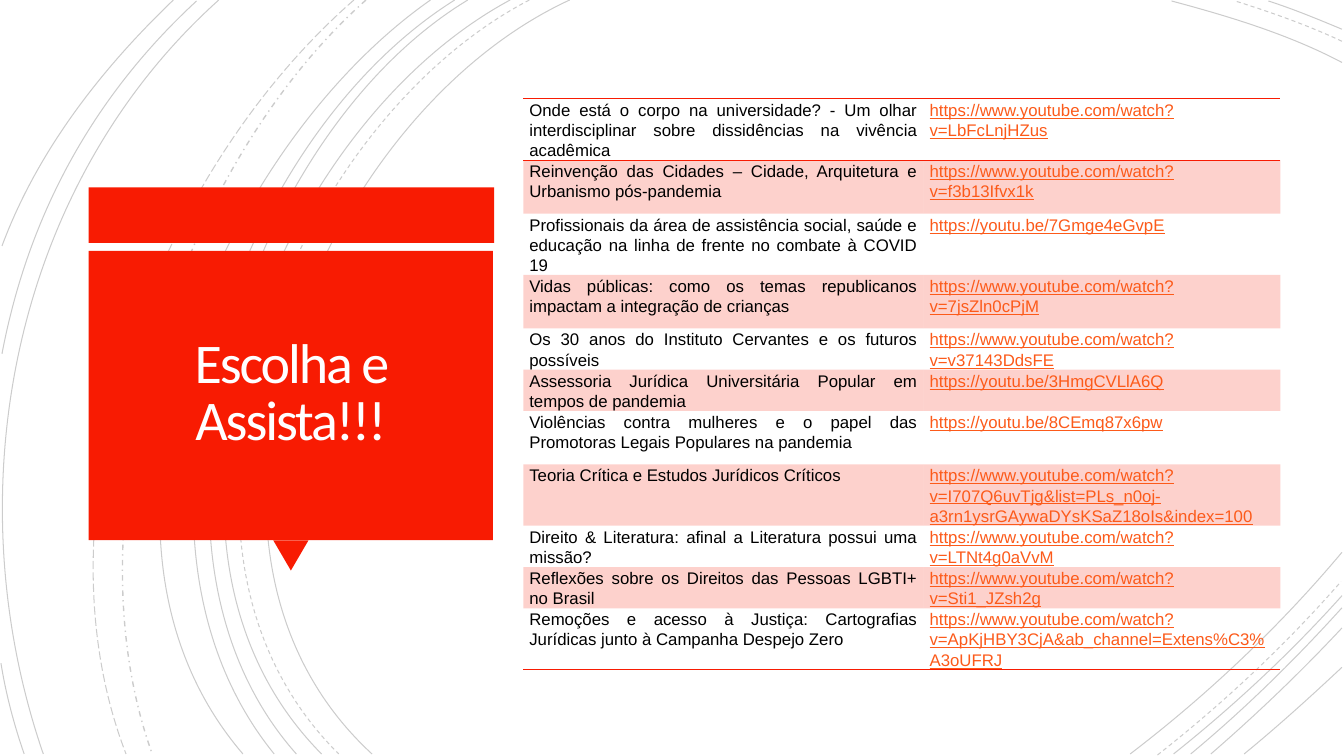
from lxml.etree import SubElement
from pptx import Presentation
from pptx.dml.color import RGBColor
from pptx.enum.dml import MSO_LINE
from pptx.enum.shapes import MSO_SHAPE
from pptx.enum.text import MSO_ANCHOR, MSO_AUTO_SIZE, PP_ALIGN
from pptx.oxml.ns import qn
from pptx.util import Inches, Pt

COLORS = {"accent": "F81B02", "link": "FC5A1A", "text": "000000", "title": "FFFEFF"}
NO_STYLE = "{2D5ABB26-0587-4C30-8999-92F81FD0307C}"

# Start point, two control points and end point of each background curve
SOLID_ARCS = [
    [(5.65, 0), (3.15, 1.15), (1.43, 5.4), (3.69, 7.48)],
    [(13.31, 0.62), (12.78, 0.34), (12.18, 0.16), (11.62, 0.01)],
    [(11.21, 7.48), (11.97, 6.9), (12.69, 6.22), (13.31, 5.48)],
    [(5.06, 0), (2.7, 1.27), (1.1, 5.37), (3.19, 7.48)],
    [(13.31, 0.29), (13.07, 0.19), (12.83, 0.09), (12.58, 0.01)],
    [(11.64, 7.48), (12.23, 7.01), (12.8, 6.48), (13.31, 5.91)],
    [(4.64, 0), (2.44, 1.33), (1.1, 5.41), (2.94, 7.48)],
    [(11.81, 7.48), (12.34, 7.04), (12.84, 6.55), (13.31, 6.03)],
    [(4.51, 0), (2.31, 1.38), (0.97, 5.33), (2.72, 7.48)],
    [(12.01, 7.48), (12.46, 7.09), (12.9, 6.67), (13.31, 6.23)],
    [(4.27, 0), (2.17, 1.47), (0.53, 5.29), (2.41, 7.48)],
    [(12.34, 7.48), (12.67, 7.21), (12.99, 6.92), (13.31, 6.62)],
    [(2.17, 0), (0.11, 1.85), (-0.46, 4.9), (0.43, 7.48)],
    [(1.95, 0.01), (0.92, 0.96), (0.28, 2.14), (0.02, 3.51)],
    [(0.01, 6.58), (0.06, 6.89), (0.14, 7.19), (0.24, 7.48)],
    [(1.72, 0), (1, 0.69), (0.37, 1.5), (0.02, 2.44)],
]
DASHED_ARCS = [
    [(5.25, 0), (2.85, 1.25), (1.23, 5.37), (3.36, 7.48)],
    [(13.31, 0.41), (12.97, 0.25), (12.6, 0.12), (12.25, 0.01)],
    [(11.48, 7.49), (12.13, 6.98), (12.75, 6.4), (13.3, 5.77)],
]
DASH_DOT_ARCS = [[(3.63, 0), (1.76, 1.66), (0.65, 5.09), (1.51, 7.48)]]
LONG_DASH_ARCS = [[(3.51, 0), (1.57, 1.69), (0.29, 4.99), (1.25, 7.48)]]
ARC_GROUPS = [
    (SOLID_ARCS, MSO_LINE.SOLID, 0.75),
    (DASHED_ARCS, MSO_LINE.DASH, 0.75),
    (DASH_DOT_ARCS, MSO_LINE.DASH_DOT, 1),
    (LONG_DASH_ARCS, MSO_LINE.LONG_DASH, 0.75),
]

TALL, LOW = 0.53, 0.37
WATCH = "https://www.youtube.com/watch?v="
SHORT = "https://youtu.be/"
VIDEOS = [
    (TALL, "Onde está o corpo na universidade? - Um olhar interdisciplinar sobre "
           "dissidências na vivência acadêmica", WATCH + "LbFcLnjHZus"),
    (TALL, "Reinvenção das Cidades – Cidade, Arquitetura e Urbanismo pós-pandemia",
     WATCH + "f3b13Ifvx1k"),
    (TALL, "Profissionais da área de assistência social, saúde e educação na linha "
           "de frente no combate à COVID 19", SHORT + "7Gmge4eGvpE"),
    (TALL, "Vidas públicas: como os temas republicanos impactam a integração de crianças",
     WATCH + "7jsZln0cPjM"),
    (LOW, "Os 30 anos do Instituto Cervantes e os futuros possíveis",
     WATCH + "v37143DdsFE"),
    (LOW, "Assessoria Jurídica Universitária Popular em tempos de pandemia",
     SHORT + "3HmgCVLlA6Q"),
    (TALL, "Violências contra mulheres e o papel das Promotoras Legais Populares "
           "na pandemia", SHORT + "8CEmq87x6pw"),
    (LOW, "Teoria Crítica e Estudos Jurídicos Críticos",
     WATCH + "I707Q6uvTjg&list=PLs_n0oj-a3rn1ysrGAywaDYsKSaZ18oIs&index=100"),
    (LOW, "Direito & Literatura: afinal a Literatura possui uma missão?",
     WATCH + "LTNt4g0aVvM"),
    (LOW, "Reflexões sobre os Direitos das Pessoas LGBTI+ no Brasil",
     WATCH + "Sti1_JZsh2g"),
    (TALL, "Remoções e acesso à Justiça: Cartografias Jurídicas junto à Campanha "
           "Despejo Zero", WATCH + "ApKjHBY3CjA&ab_channel=Extens%C3%A3oUFRJ"),
]


def rgb(name):
    return RGBColor.from_string(COLORS[name])


def apply(obj, formats):
    for name, value in formats.items():
        setattr(obj, name, value)


def set_alpha(element, percent):
    """Make every colour inside the element partly transparent."""
    for clr in element.iter(qn("a:srgbClr")):
        SubElement(clr, qn("a:alpha"), val=str(percent * 1000))


class SlideBuilder:
    cell_format = {"margin_left": Inches(0.06), "margin_right": Inches(0.06),
                   "margin_top": Inches(0.01), "margin_bottom": 0}
    cell_paragraph = {"line_spacing": 1.07, "space_after": Pt(8)}
    cell_font = {"name": "Arial", "size": Pt(12)}
    title_frame = {"word_wrap": True, "auto_size": MSO_AUTO_SIZE.NONE,
                   "vertical_anchor": MSO_ANCHOR.MIDDLE,
                   **{f"margin_{side}": Inches(0.25)
                      for side in ("left", "right", "top", "bottom")}}
    title_paragraph = {"alignment": PP_ALIGN.CENTER, "line_spacing": 0.85}
    title_font = {"name": "Calibri", "size": Pt(40)}

    def __init__(self, prs):
        self.slide = prs.slides.add_slide(prs.slide_layouts[5])
        self.shapes = self.slide.shapes

    def arc(self, points, dash, width):
        """Draw one cubic curve given its end and control points."""
        start, *rest = [(Inches(x), Inches(y)) for x, y in points]
        builder = self.shapes.build_freeform(*start)
        builder.add_line_segments(rest, close=False)
        sp = builder.convert_to_shape()
        segments = sp._element.xpath(".//a:lnTo")
        curve = SubElement(segments[0].getparent(), qn("a:cubicBezTo"))
        for segment in segments:
            curve.append(segment[0])
            segment.getparent().remove(segment)
        sp.shadow.inherit = False
        sp.fill.background()
        sp.line.color.rgb = rgb("text")
        apply(sp.line, {"width": Pt(width), "dash_style": dash})
        set_alpha(sp._element, 20)

    def block(self, kind, box, rotation=0):
        sp = self.shapes.add_shape(kind, *map(Inches, box))
        sp.rotation = rotation
        sp.shadow.inherit = False
        sp.fill.solid()
        sp.fill.fore_color.rgb = rgb("accent")
        sp.line.fill.background()

    def title(self, text, box):
        sp = self.shapes.title
        apply(sp, dict(zip(("left", "top", "width", "height"), map(Inches, box))))
        sp._element.getparent().append(sp._element)  # bring in front of the blocks
        tf = sp.text_frame
        apply(tf, self.title_frame)
        p = tf.paragraphs[0]
        apply(p, self.title_paragraph)
        r = p.add_run()
        r.text = text
        apply(r.font, self.title_font)
        r.font.color.rgb = rgb("title")
        r._r.get_or_add_rPr().set("spc", "-150")

    def border(self, cell, side):
        ln = SubElement(cell._tc.get_or_add_tcPr(), qn(f"a:ln{side}"), w=str(Pt(1)))
        SubElement(SubElement(ln, qn("a:solidFill")), qn("a:srgbClr"), val=COLORS["accent"])

    def cell(self, cell, text, color, formats, sides, shaded):
        apply(cell, self.cell_format)
        for side in sides:
            self.border(cell, side)
        if shaded:
            cell.fill.solid()
            cell.fill.fore_color.rgb = rgb("accent")
            set_alpha(cell._tc.tcPr, 20)
        else:
            cell.fill.background()
        p = cell.text_frame.paragraphs[0]
        apply(p, {**self.cell_paragraph, **formats})
        r = p.add_run()
        r.text = text
        apply(r.font, {**self.cell_font, "underline": color == "link"})
        r.font.color.rgb = rgb(color)

    def video_table(self, videos, left, top, widths):
        height = sum(video[0] for video in videos)
        box = map(Inches, (left, top, sum(widths), height))
        table = self.shapes.add_table(len(videos), len(widths), *box).table
        apply(table, {"first_row": False, "horz_banding": False})
        table._tbl.tblPr.find(qn("a:tableStyleId")).text = NO_STYLE
        for column, width in zip(table.columns, widths):
            column.width = Inches(width)
        borders = {0: "TB", len(videos) - 1: "B"}
        for i, (row_height, name, link) in enumerate(videos):
            table.rows[i].height = Inches(row_height)
            look = (borders.get(i, ""), i % 2 == 1)
            self.cell(table.cell(i, 0), name, "text", {"alignment": PP_ALIGN.JUSTIFY}, *look)
            self.cell(table.cell(i, 1), link, "link", {"alignment": PP_ALIGN.LEFT}, *look)


def main():
    prs = Presentation()
    apply(prs, {"slide_width": Inches(13.33), "slide_height": Inches(7.5)})
    s = SlideBuilder(prs)
    for arcs, dash, width in ARC_GROUPS:
        for points in arcs:
            s.arc(points, dash, width)
    s.block(MSO_SHAPE.RECTANGLE, (0.88, 1.86, 4.02, 0.55))
    s.block(MSO_SHAPE.ISOSCELES_TRIANGLE, (2.71, 5.36, 0.35, 0.3), rotation=180)
    s.block(MSO_SHAPE.RECTANGLE, (0.88, 2.49, 4.01, 2.87))
    s.title("Escolha e Assista!!!", (0.97, 2.57, 3.83, 2.69))
    s.video_table(VIDEOS, 5.19, 0.98, (3.97, 3.54))
    prs.save("out.pptx")


if __name__ == "__main__":
    main()
